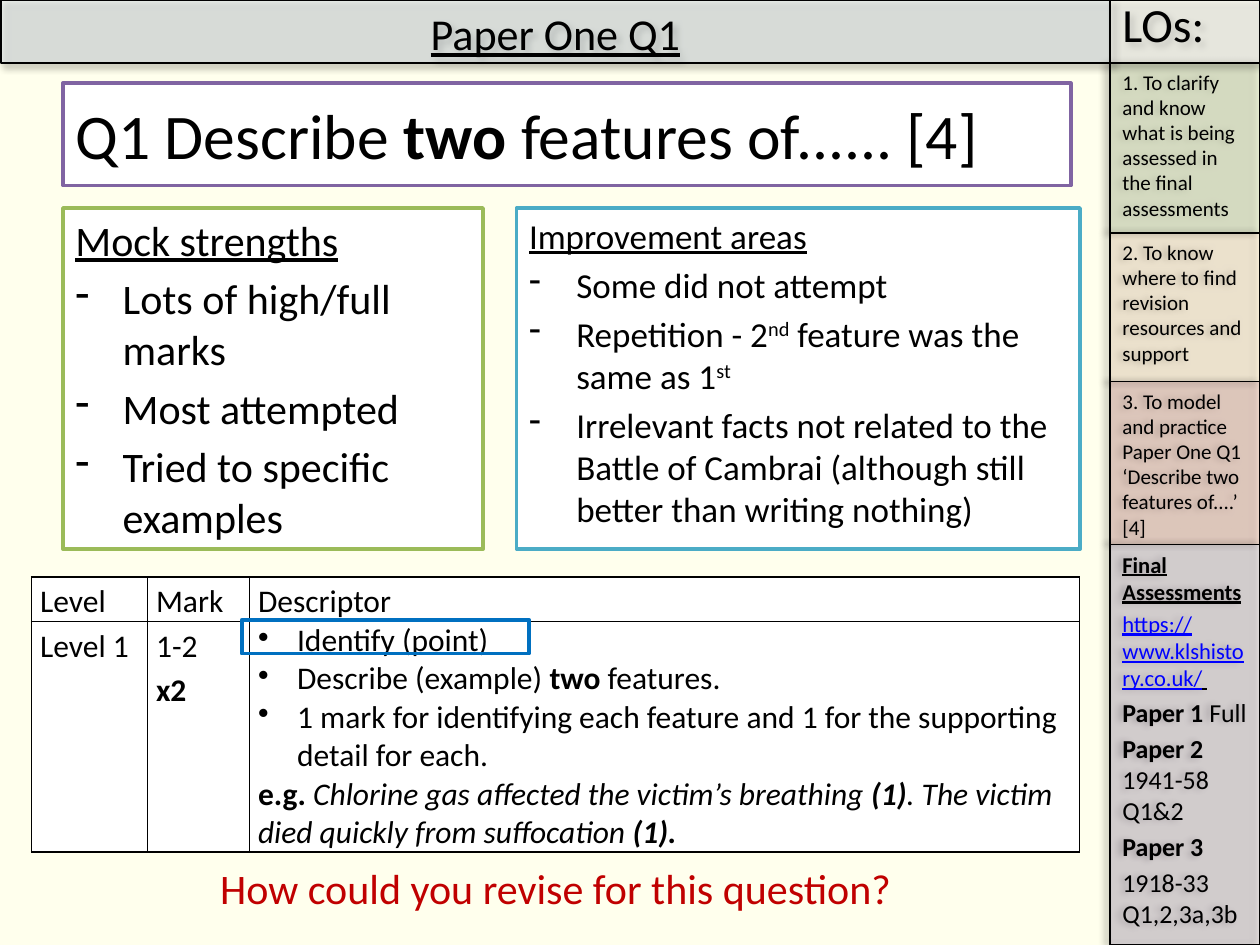
"""Builds the exam-question revision slide "Paper One Q1"."""
from itertools import pairwise

from lxml.etree import SubElement
from pptx import Presentation
from pptx.dml.color import RGBColor
from pptx.enum.shapes import MSO_SHAPE as Shape
from pptx.enum.text import MSO_ANCHOR as Anchor, PP_ALIGN as Align
from pptx.oxml.ns import qn
from pptx.util import Pt

BLACK = RGBColor(0x00, 0x00, 0x00)
WHITE = RGBColor(0xFF, 0xFF, 0xFF)
CREAM = RGBColor(0xFF, 0xFF, 0xED)
ICE = RGBColor(0xDC, 0xE6, 0xF2)
SAGE = RGBColor(0xD7, 0xE4, 0xBD)
PEACH = RGBColor(0xFC, 0xD5, 0xB5)
ROSE = RGBColor(0xD9, 0x96, 0x94)
LILAC = RGBColor(0xB3, 0xA2, 0xC7)
GREEN = RGBColor(0x9B, 0xBB, 0x59)
TEAL = RGBColor(0x4B, 0xAC, 0xC6)
PURPLE = RGBColor(0x80, 0x64, 0xA2)
BLUE = RGBColor(0x00, 0x70, 0xC0)
LINK = RGBColor(0x00, 0x00, 0xFF)
RED = RGBColor(0xC0, 0x00, 0x00)

SIDE_LEFT, SIDE_WIDTH = 634.3, 85.7
SIDE_EDGES = [36, 133.2, 218.2, 311, 540]
ASSESSMENTS = [
    [("Final Assessments", "bu", 12.9)],
    [("https://www.klshistory.co.uk/", "ul", 12.9), (" ", "u", 12.9)],
    [("Paper 1 ", "b"), ("Full", "")],
    [("Paper 2", "b"), (" 1941-58 Q1&2", "")],
    [("Paper 3", "b")],
    "1918-33 Q1,2,3a,3b",
]
SIDE_PANELS = [
    (SAGE, 44, 12, ["1. To clarify and know what is being assessed in the final assessments"]),
    (PEACH, 25, 12, ["2. To know where to find revision resources and support"]),
    (ROSE, 33, 12, ["3. To model and practice Paper One Q1 ‘Describe two features of....’ [4]"]),
    (LILAC, 31, 14.8, ASSESSMENTS),
]
STRENGTHS = [
    [("Mock strengths", "u")],
    "- Lots of high/full marks",
    "- Most attempted",
    "- Tried to specific examples",
]
IMPROVEMENTS = [
    [("Improvement areas", "u")],
    "- Some did not attempt",
    [("- Repetition - 2", ""), ("nd", "^"), (" feature was the same as 1", ""), ("st", "^")],
    "- Irrelevant facts not related to the Battle of Cambrai "
    "(although still better than writing nothing)",
]
DESCRIPTOR = [
    "• Identify (point)",
    [("• Describe (example) ", ""), ("two", "b"), (" features.", "")],
    "• 1 mark for identifying each feature and 1 for the supporting detail for each.",
    [("e.g. ", "b"), ("Chlorine gas affected the victim’s breathing ", "i"), ("(1)", "bi"),
     (". The victim died quickly from suffocation ", "i"), ("(1).", "bi")],
]
LEVELS = [
    [["Level"], ["Mark"], ["Descriptor"]],
    [["Level 1"], ["1-2", [("x2", "b")]], DESCRIPTOR],
]


class SlideBuilder:
    """Holds the style and the current slide, and draws each kind of element."""

    font = "Calibri"

    def __init__(self, deck):
        self.page = deck.slides.add_slide(deck.slide_layouts[6])
        self.page.background.fill.solid()
        self.page.background.fill.fore_color.rgb = CREAM

    def paragraphs(self, frame, paras, size, color=BLACK, align=Align.LEFT,
                   gap=0.2, spacing=None, indent=27):
        """Fills a frame with paragraphs; a leading dash or dot becomes a bullet."""
        frame.word_wrap = True
        for index, spans in enumerate(paras):
            para = frame.add_paragraph() if index else frame.paragraphs[0]
            spans = [(spans, "")] if isinstance(spans, str) else list(spans)
            first, *rest = spans[0]
            if first[:2] in ("- ", "• "):
                spans[0] = (first[2:], *rest)
                props = para._p.get_or_add_pPr()
                props.set("marL", str(Pt(indent)))
                props.set("indent", str(-Pt(indent)))
                SubElement(props, qn("a:buChar"), char=first[0])
            para.alignment = align
            if spacing:
                para.line_spacing = spacing
            if index and gap:
                para.space_before = Pt(gap * size)
            for text, flags, *own_size in spans:
                self.span(para, text, flags, own_size[0] if own_size else size, color)

    def span(self, para, text, flags, size, color):
        """Adds one run: b bold, i italic, u underline, l link colour, ^ superscript."""
        span = para.add_run()
        span.text = text
        span.font.name = self.font
        span.font.size = Pt(size)
        span.font.bold = "b" in flags
        span.font.italic = "i" in flags
        span.font.underline = "u" in flags
        span.font.color.rgb = LINK if "l" in flags else color
        if "^" in flags:
            span.font._element.set("baseline", "30000")

    def panel(self, place, fill, line, weight=2, anchor=Anchor.TOP):
        """Draws an outlined rectangle, filled unless fill is None."""
        box = self.page.shapes.add_shape(Shape.RECTANGLE, *map(Pt, place))
        box.shadow.inherit = False
        if fill is None:
            box.fill.background()
        else:
            box.fill.solid()
            box.fill.fore_color.rgb = fill
        box.line.color.rgb = line
        box.line.width = Pt(weight)
        box.text_frame.vertical_anchor = anchor
        return box

    def glass(self, place, fill, opacity, angle):
        """Draws a translucent panel with a soft shadow."""
        box = self.panel(place, fill, BLACK, 0.75)
        props = box._element.spPr
        tint = props.find(qn("a:solidFill"))[0]
        SubElement(tint, qn("a:alpha"), val=str(opacity * 1000))
        shadow = SubElement(props.find(qn("a:effectLst")), qn("a:outerShdw"),
                            blurRad=str(Pt(4)), dist=str(Pt(3)),
                            dir=str(angle * 60000), rotWithShape="0")
        shade = SubElement(shadow, qn("a:srgbClr"), val=str(BLACK))
        SubElement(shade, qn("a:alpha"), val="40000")
        return box

    def label(self, place, text, size, color):
        """Adds a centred line of text."""
        box = self.page.shapes.add_textbox(*map(Pt, place))
        box.text_frame.vertical_anchor = Anchor.MIDDLE
        self.paragraphs(box.text_frame, [text], size, color, Align.CENTER)

    def table(self, left, top, widths, heights, rows, size):
        """Adds a white table with black borders."""
        place = (left, top, sum(widths), sum(heights))
        table = self.page.shapes.add_table(len(rows), len(widths), *map(Pt, place)).table
        for column, width in zip(table.columns, widths):
            column.width = Pt(width)
        for row, height, contents in zip(table.rows, heights, rows):
            row.height = Pt(height)
            for cell, paras in zip(row.cells, contents):
                cell.margin_left = cell.margin_right = Pt(5)
                cell.margin_top = cell.margin_bottom = 0
                spacing = None if paras is DESCRIPTOR else 1.15
                self.paragraphs(cell.text_frame, paras, size, gap=0,
                                spacing=spacing, indent=22.3)
                self.borders(cell)
                cell.fill.solid()
                cell.fill.fore_color.rgb = WHITE

    def borders(self, cell):
        """Outlines a cell on all four sides."""
        props = cell._tc.get_or_add_tcPr()
        for side in ("lnL", "lnR", "lnT", "lnB"):
            line = SubElement(props, qn(f"a:{side}"), w=str(Pt(1)))
            SubElement(SubElement(line, qn("a:solidFill")), qn("a:srgbClr"), val=str(BLACK))


def main():
    deck = Presentation()
    deck.slide_width, deck.slide_height = Pt(720), Pt(540)
    slide = SlideBuilder(deck)

    sides = zip(pairwise(SIDE_EDGES), SIDE_PANELS)
    for (top, bottom), (fill, opacity, size, paras) in sides:
        box = slide.glass((SIDE_LEFT, top, SIDE_WIDTH, bottom - top), fill, opacity, 180)
        slide.paragraphs(box.text_frame, paras, size)
    header = slide.glass((0.5, 0, SIDE_LEFT - 0.5, 36), ICE, 42, 45)
    slide.paragraphs(header.text_frame, [[("Paper One Q1", "u")]], 25.2, align=Align.CENTER)
    corner = slide.glass((SIDE_LEFT, 0, SIDE_WIDTH, 36), WHITE, 42, 45)
    slide.paragraphs(corner.text_frame, ["LOs:"], 27.2, spacing=0.8)

    strengths = slide.panel((36, 118.8, 240, 195), WHITE, GREEN)
    slide.paragraphs(strengths.text_frame, STRENGTHS, 24)
    improvements = slide.panel((295.2, 118.8, 322, 195), WHITE, TEAL)
    slide.paragraphs(improvements.text_frame, IMPROVEMENTS, 20)
    question = slide.panel((36, 47.5, 576, 58.5), WHITE, PURPLE, anchor=Anchor.MIDDLE)
    slide.paragraphs(question.text_frame,
                     [[("Q1 Describe ", ""), ("two", "b"), (" features of...... [4]", "")]], 36.3)

    slide.table(18, 329.8, [66.2, 58.3, 474.5], [25, 131], LEVELS, 18)
    slide.panel((138.2, 354.2, 164.2, 19.4), None, BLUE)
    slide.label((0, 474.5, 635, 65), "How could you revise for this question?", 24, RED)
    deck.save("out.pptx")


if __name__ == "__main__":
    main()
